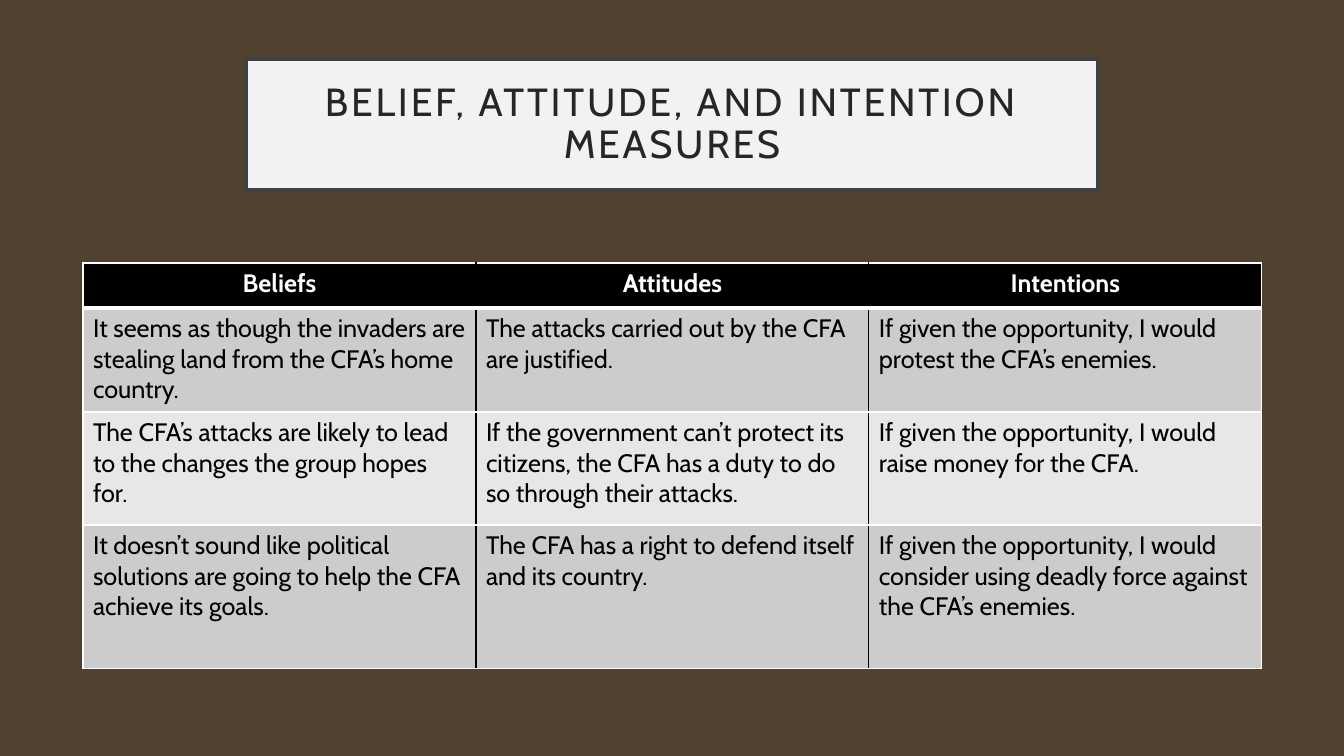
from dataclasses import dataclass

from lxml.etree import SubElement
from pptx import Presentation
from pptx.dml.color import RGBColor
from pptx.enum.text import MSO_ANCHOR as Anchor, MSO_AUTO_SIZE as AutoSize, PP_ALIGN as Align
from pptx.oxml.ns import qn
from pptx.util import Emu, Pt

PX_PER_INCH = 100.8
FONT = "Cabin"
BROWN = RGBColor(0x50, 0x41, 0x30)
PANEL = RGBColor(0xF2, 0xF2, 0xF2)
OUTLINE = RGBColor(0x40, 0x40, 0x40)
TITLE_INK = RGBColor(0x26, 0x26, 0x26)
BLACK = RGBColor(0x00, 0x00, 0x00)
WHITE = RGBColor(0xFF, 0xFF, 0xFF)
DARK_BAND = RGBColor(0xCC, 0xCC, 0xCC)
LIGHT_BAND = RGBColor(0xE7, 0xE7, 0xE7)


@dataclass
class Row:
    height: int
    fill: RGBColor
    texts: tuple[str, ...]


COLUMN_WIDTH = 393
ROWS = [
    Row(45, BLACK, ("Beliefs", "Attitudes", "Intentions")),
    Row(104, DARK_BAND, (
        "It seems as though the invaders are stealing land from the CFA’s home country.",
        "The attacks carried out by the CFA are justified.",
        "If given the opportunity, I would protest the CFA’s enemies.")),
    Row(113, LIGHT_BAND, (
        "The CFA’s attacks are likely to lead to the changes the group hopes for.",
        "If the government can’t protect its citizens, the CFA has a duty to do so "
        "through their attacks.",
        "If given the opportunity, I would raise money for the CFA.")),
    Row(144, DARK_BAND, (
        "It doesn’t sound like political solutions are going to help the CFA achieve its goals.",
        "The CFA has a right to defend itself and its country.",
        "If given the opportunity, I would consider using deadly force against "
        "the CFA’s enemies.")),
]


def px(length: int) -> Emu:
    return Emu(round(length * 914400 / PX_PER_INCH))


def write(frame, text: str, *, size: int, color: RGBColor, bold: bool = False,
          align: Align = Align.LEFT, line_spacing: float = 1.0, tracking: int = 0) -> None:
    para = frame.paragraphs[0]
    para.alignment = align
    para.line_spacing = line_spacing
    span = para.add_run()
    span.text = text
    span.font.name = FONT
    span.font.size = Pt(size)
    span.font.bold = bold
    span.font.color.rgb = color
    if tracking:
        span.font._element.set("spc", str(tracking * 100))


def add_border(cell, side: str, color: RGBColor, points: int) -> None:
    properties = cell._tc.get_or_add_tcPr()
    line = SubElement(properties, qn(f"a:ln{side}"), w=str(Pt(points)))
    fill = SubElement(line, qn("a:solidFill"))
    SubElement(fill, qn("a:srgbClr"), val=str(color))


def draw_title(page) -> None:
    box = page.shapes.title
    box.left, box.top, box.width, box.height = px(246), px(59), px(852), px(131)
    box.fill.solid()
    box.fill.fore_color.rgb = PANEL
    box.line.color.rgb = OUTLINE
    box.line.width = Pt(2.5)
    frame = box.text_frame
    frame.word_wrap = True
    frame.auto_size = AutoSize.NONE
    frame.vertical_anchor = Anchor.MIDDLE
    frame.margin_left = frame.margin_right = px(20)
    frame.margin_top = frame.margin_bottom = px(20)
    write(frame, "BELIEF, ATTITUDE, AND INTENTION MEASURES", size=28, color=TITLE_INK,
          align=Align.CENTER, line_spacing=0.9, tracking=2)


def draw_table(page, rows: list[Row]) -> None:
    count = len(rows[0].texts)
    table = page.shapes.add_table(
        len(rows), count, px(83), px(263), px(COLUMN_WIDTH * count),
        px(sum(row.height for row in rows))).table
    table.horz_banding = False
    for column in table.columns:
        column.width = px(COLUMN_WIDTH)
    for r, row in enumerate(rows):
        table.rows[r].height = px(row.height)
        header = r == 0
        for c, text in enumerate(row.texts):
            cell = table.cell(r, c)
            # White outside and between rows, black between columns
            add_border(cell, "L", WHITE if c == 0 else BLACK, 1)
            add_border(cell, "R", WHITE if c == count - 1 else BLACK, 1)
            add_border(cell, "T", WHITE, 1)
            add_border(cell, "B", WHITE, 3 if header else 1)
            cell.fill.solid()
            cell.fill.fore_color.rgb = row.fill
            write(cell.text_frame, text, size=18, bold=header,
                  color=WHITE if header else BLACK,
                  align=Align.CENTER if header else Align.LEFT)


def main() -> None:
    deck = Presentation()
    deck.slide_width, deck.slide_height = px(1344), px(756)
    page = deck.slides.add_slide(deck.slide_layouts.get_by_name("Title Only"))
    page.background.fill.solid()
    page.background.fill.fore_color.rgb = BROWN
    draw_title(page)
    draw_table(page, ROWS)
    deck.save("out.pptx")


if __name__ == "__main__":
    main()
